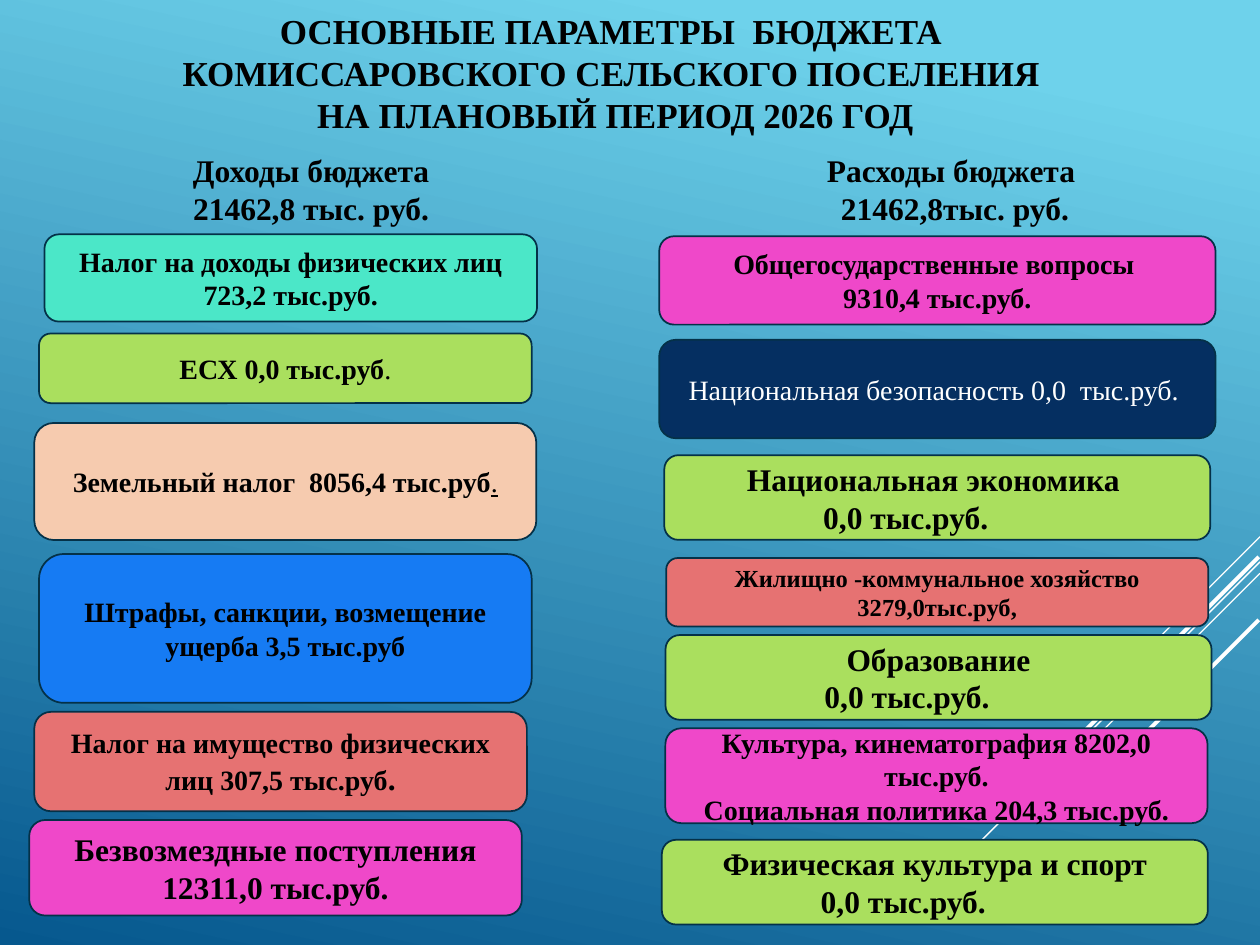
from dataclasses import dataclass

from lxml.etree import SubElement
from pptx import Presentation
from pptx.dml.color import RGBColor
from pptx.enum.shapes import MSO_CONNECTOR, MSO_SHAPE
from pptx.enum.text import MSO_ANCHOR, PP_ALIGN
from pptx.oxml.ns import qn
from pptx.slide import Slide
from pptx.text.text import TextFrame
from pptx.util import Pt

FONT = "Times New Roman"
BLACK = RGBColor(0x00, 0x00, 0x00)
WHITE = RGBColor(0xFF, 0xFF, 0xFF)
SKY = RGBColor(0x6E, 0xD2, 0xEB)
DEEP = RGBColor(0x06, 0x58, 0x8E)
EDGE = RGBColor(0x04, 0x31, 0x48)
MINT = RGBColor(0x4B, 0xE7, 0xC8)
LIME = RGBColor(0xAA, 0xDF, 0x5E)
PEACH = RGBColor(0xF6, 0xCB, 0xAF)
CORAL = RGBColor(0xE6, 0x72, 0x72)
PINK = RGBColor(0xEF, 0x48, 0xC9)
NAVY = RGBColor(0x05, 0x2F, 0x61)
BLUE = RGBColor(0x16, 0x7B, 0xF3)


@dataclass
class Area:
    left: float
    top: float
    width: float
    height: float


@dataclass
class Tail:
    """A full stop styled apart from the words before it."""
    bold: bool = True
    under: bool = False
    size: float | None = None


@dataclass
class Card:
    area: Area
    fill: RGBColor
    lines: list[str]
    size: float = 16
    color: RGBColor = BLACK
    bold: bool = True
    shift: float = 0  # right margin of the last line
    tail: Tail | None = None


@dataclass
class Label:
    area: Area
    lines: list[str]
    size: float
    anchor: MSO_ANCHOR


@dataclass
class Ray:
    x: float
    y: float
    reach: float  # run down and to the left
    width: float


# Diagonal lines in the corner
RAYS = [
    Ray(720, 306.7, 59.8, 0.75),
    Ray(720, 321.1, 194.8, 0.75),
    Ray(720, 327.6, 123.8, 0.75),
    Ray(719.3, 318.2, 113.4, 2.25),
    Ray(719.3, 354.2, 82.1, 2.25),
]

LABELS = [
    Label(Area(33.8, 9.4, 635.8, 64.1),
          ["ОСНОВНЫЕ ПАРАМЕТРЫ  БЮДЖЕТА \vКОМИССАРОВСКОГО СЕЛЬСКОГО ПОСЕЛЕНИЯ \v"
           "НА ПЛАНОВЫЙ ПЕРИОД 2026 ГОД"], 20, MSO_ANCHOR.MIDDLE),
    Label(Area(22.3, 82.8, 315.4, 51.1),
          ["Доходы бюджета ", "21462,8 тыс. руб. "], 18, MSO_ANCHOR.TOP),
    Label(Area(399.6, 82.8, 292.3, 51.1),
          ["Расходы бюджета ", "21462,8тыс. руб."], 18, MSO_ANCHOR.TOP),
]

INCOME = [
    Card(Area(25.4, 133.9, 281.5, 49.9), MINT,
         ["Налог на доходы физических лиц 723,2 тыс.руб."]),
    Card(Area(22.3, 190.6, 281.5, 39.8), LIME, ["ЕСХ 0,0 тыс.руб"],
         tail=Tail(bold=False)),
    Card(Area(19.6, 241.7, 286.9, 66.9), PEACH,
         ["Земельный налог  8056,4 тыс.руб"], tail=Tail(bold=False, under=True)),
    Card(Area(22.3, 316.6, 281.5, 85), BLUE,
         ["Штрафы, санкции, возмещение ущерба 3,5 тыс.руб"]),
    Card(Area(19.6, 406.8, 281.5, 56.8), CORAL,
         ["Налог на имущество физических лиц 307,5 тыс.руб"], tail=Tail(size=18)),
    Card(Area(16.7, 468.6, 281.5, 54.6), PINK,
         ["Безвозмездные поступления", "12311,0 тыс.руб."], 18),
]

SPENDING = [
    Card(Area(376.7, 135, 317.9, 50.5), PINK,
         ["Общегосударственные вопросы ", "9310,4 тыс.руб."]),
    Card(Area(376.7, 194.2, 317.9, 56.2), NAVY,
         ["Национальная безопасность 0,0  тыс.руб. "], color=WHITE, bold=False),
    Card(Area(379.6, 260.1, 312, 48.4), LIME,
         ["Национальная экономика ", "0,0 тыс.руб."], 18, shift=36),
    Card(Area(380.7, 318.9, 309.8, 39.1), CORAL,
         ["Жилищно -коммунальное хозяйство", "3279,0тыс.руб,"], 14),
    Card(Area(380.3, 362.9, 312, 48.4), LIME,
         ["Образование", "0,0 тыс.руб."], 18, shift=36),
    Card(Area(380.2, 416.2, 309.8, 54.2), PINK,
         ["Культура, кинематография 8202,0 тыс.руб.",
          "Социальная политика 204,3 тыс.руб."]),
    Card(Area(378.2, 479.9, 312, 48.4), LIME,
         ["Физическая культура и спорт", "0,0 тыс.руб."], 18, shift=36),
]


def place(area: Area) -> tuple[Pt, Pt, Pt, Pt]:
    return Pt(area.left), Pt(area.top), Pt(area.width), Pt(area.height)


def write(frame: TextFrame, lines: list[str], size: float, anchor: MSO_ANCHOR,
          color: RGBColor = BLACK, bold: bool = True) -> None:
    frame.word_wrap = True
    frame.vertical_anchor = anchor
    frame.text = "\n".join(lines)
    for para in frame.paragraphs:
        para.alignment = PP_ALIGN.CENTER
        font = para.font
        font.name, font.size, font.bold = FONT, Pt(size), bold
        font.color.rgb = color


def draw_ray(slide: Slide, ray: Ray) -> None:
    line = slide.shapes.add_connector(
        MSO_CONNECTOR.STRAIGHT, Pt(ray.x), Pt(ray.y),
        Pt(ray.x - ray.reach), Pt(ray.y + ray.reach))
    line.line.color.rgb = WHITE
    line.line.width = Pt(ray.width)
    SubElement(line._element.spPr, qn("a:effectLst"))


def draw_label(slide: Slide, label: Label) -> None:
    box = slide.shapes.add_textbox(*place(label.area))
    write(box.text_frame, label.lines, label.size, label.anchor)


def draw_card(slide: Slide, card: Card) -> None:
    shape = slide.shapes.add_shape(MSO_SHAPE.ROUNDED_RECTANGLE, *place(card.area))
    shape.shadow.inherit = False
    shape.fill.solid()
    shape.fill.fore_color.rgb = card.fill
    shape.line.color.rgb = EDGE
    shape.line.width = Pt(1)
    frame = shape.text_frame
    write(frame, card.lines, card.size, MSO_ANCHOR.MIDDLE, card.color, card.bold)
    last = frame.paragraphs[-1]
    if card.shift:
        last._p.get_or_add_pPr().set("marR", str(Pt(card.shift)))
    if card.tail:
        run = last.add_run()
        run.text = "."
        run.font.bold = card.tail.bold
        run.font.underline = card.tail.under
        run.font.size = Pt(card.tail.size or card.size)


def main() -> None:
    deck = Presentation()
    deck.slide_width, deck.slide_height = Pt(720), Pt(540)
    slide = deck.slides.add_slide(deck.slide_layouts[6])

    # Background, light at the top right
    fill = slide.background.fill
    fill.gradient()
    fill.gradient_angle = 258
    for stop, color, spot in zip(fill.gradient_stops, (SKY, DEEP), (0.1, 1)):
        stop.color.rgb = color
        stop.position = spot

    for ray in RAYS:
        draw_ray(slide, ray)
    for label in LABELS:
        draw_label(slide, label)
    for card in INCOME + SPENDING:
        draw_card(slide, card)
    deck.save("out.pptx")


if __name__ == "__main__":
    main()
